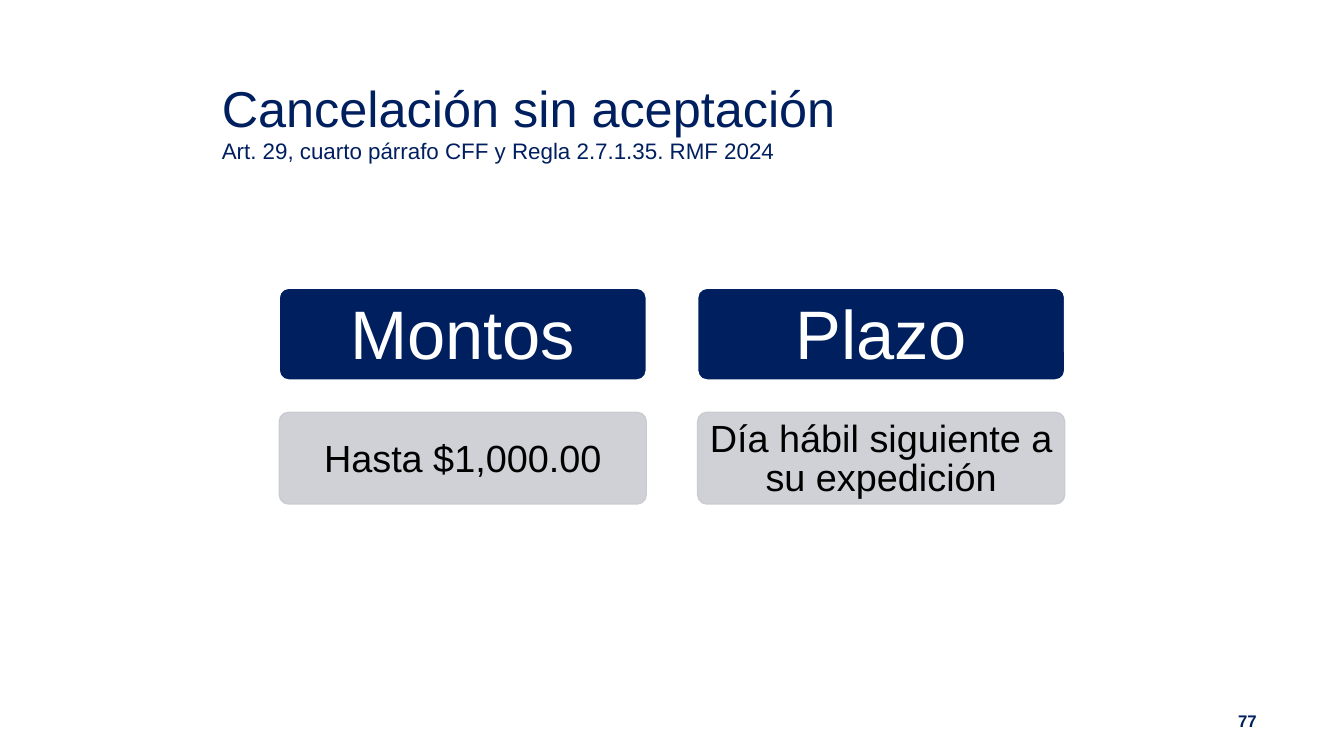
from dataclasses import dataclass

from lxml.etree import SubElement
from pptx import Presentation
from pptx.dml.color import RGBColor
from pptx.enum.shapes import MSO_SHAPE
from pptx.enum.text import MSO_ANCHOR, PP_ALIGN
from pptx.oxml.ns import qn
from pptx.util import Inches, Pt


@dataclass(frozen=True)
class Theme:
    font: str = "Arial"
    navy: str = "001F5F"
    grey: str = "CACCD2"
    white: str = "FFFFFF"
    black: str = "000000"
    title: float = 36
    subtitle: float = 16
    heading: float = 49
    body: float = 27
    number: float = 12


THEME = Theme()
CARD_W, CARD_H = 3.64, 0.91
LEFT, TOP = 2.77, 2.86
COLUMN_STEP, ROW_STEP = 4.15, 1.23
COLUMNS = [
    ("Montos", "Hasta $1,000.00"),
    ("Plazo", "Día hábil siguiente a su expedición"),
]


def rgb(value):
    return RGBColor.from_string(value)


def set_insets(tf, top=0, bottom=0):
    tf.margin_left = tf.margin_right = 0
    tf.margin_top, tf.margin_bottom = Inches(top), Inches(bottom)
    tf.word_wrap = True


def add_run(p, text, size, color, bold=False):
    r = p.add_run()
    r.text = text
    r.font.name = THEME.font
    r.font.size = Pt(size)
    r.font.bold = bold
    r.font.color.rgb = rgb(color)


def add_text_box(s, left, top, width, height, lines, bold=False):
    """Add navy lines given as (text, size, line spacing in points)."""
    tf = s.shapes.add_textbox(
        Inches(left), Inches(top), Inches(width), Inches(height)
    ).text_frame
    set_insets(tf)
    for i, (text, size, spacing) in enumerate(lines):
        p = tf.add_paragraph() if i else tf.paragraphs[0]
        p.line_spacing = Pt(spacing)
        add_run(p, text, size, THEME.navy, bold)


def set_opacity(sp, percent):
    color = sp.fill._xPr.find(qn("a:solidFill"))[0]
    SubElement(color, qn("a:alpha")).set("val", str(percent * 1000))


def add_card(s, column, row, text, fill, line, size, color):
    sp = s.shapes.add_shape(
        MSO_SHAPE.ROUNDED_RECTANGLE,
        Inches(LEFT + column * COLUMN_STEP), Inches(TOP + row * ROW_STEP),
        Inches(CARD_W), Inches(CARD_H),
    )
    sp.adjustments[0] = 0.1
    sp.shadow.inherit = False
    sp.fill.solid()
    sp.fill.fore_color.rgb = rgb(fill)
    sp.line.color.rgb = rgb(line)
    sp.line.width = Pt(1)
    tf = sp.text_frame
    tf.vertical_anchor = MSO_ANCHOR.MIDDLE
    p = tf.paragraphs[0]
    p.alignment = PP_ALIGN.CENTER
    add_run(p, text, size, color)
    return sp


def add_heading_card(s, column, text):
    sp = add_card(s, column, 0, text, THEME.navy, THEME.white,
                  THEME.heading, THEME.white)
    set_insets(sp.text_frame, bottom=0.04)


def add_detail_card(s, column, text):
    sp = add_card(s, column, 1, text, THEME.grey, THEME.grey,
                  THEME.body, THEME.black)
    set_opacity(sp, 90)
    set_insets(sp.text_frame, top=0.04)
    sp.text_frame.paragraphs[0].line_spacing = Pt(28)


def main():
    prs = Presentation()
    prs.slide_width, prs.slide_height = Inches(13.33), Inches(7.5)
    s = prs.slides.add_slide(prs.slide_layouts[6])
    add_text_box(s, 2.2, 0.78, 9.24, 0.96, [
        ("Cancelación sin aceptación", THEME.title, 42.5),
        ("Art. 29, cuarto párrafo CFF y Regla 2.7.1.35. RMF 2024",
         THEME.subtitle, 18.5),
    ])
    for column, (heading, detail) in enumerate(COLUMNS):
        add_heading_card(s, column, heading)
        add_detail_card(s, column, detail)
    add_text_box(s, 12.28, 7.05, 0.25, 0.22,
                 [("77", THEME.number, 14.3)], bold=True)
    prs.save("out.pptx")


if __name__ == "__main__":
    main()
